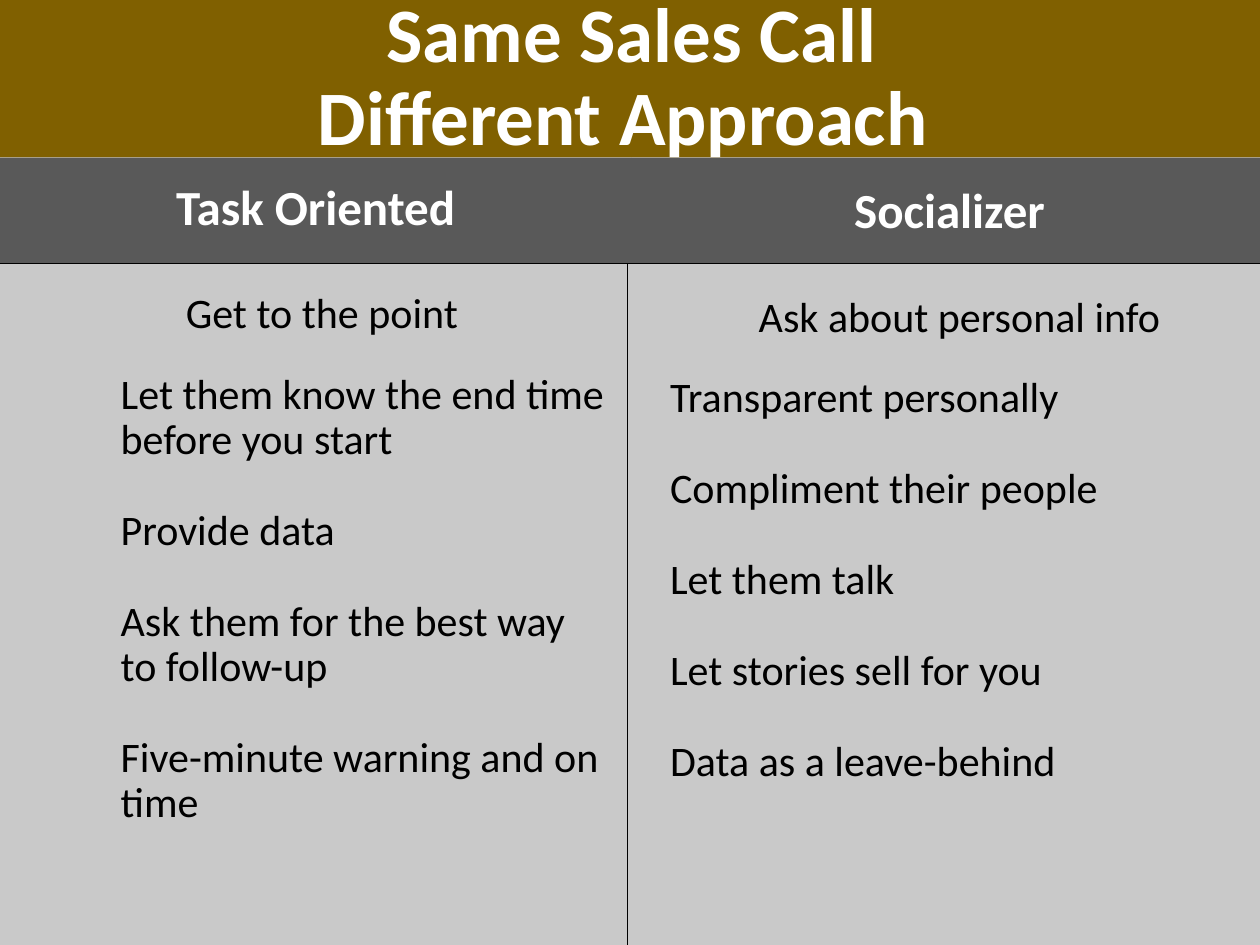
from pptx import Presentation
from pptx.dml.color import RGBColor
from pptx.enum.shapes import MSO_SHAPE
from pptx.enum.text import MSO_ANCHOR, PP_ALIGN
from pptx.util import Inches, Pt

COLORS = {
    "gold": "806000",
    "header": "595959",
    "panel": "C9C9C9",
    "white": "FFFFFF",
    "black": "000000",
}

PANELS = [
    ((0, 0, 10, 1.25), "gold", None),
    ((0, 1.25, 5.01, 1.25), "header", None),
    ((5.01, 1.25, 4.99, 0.99), "header", None),
    ((-0.05, 2.09, 5.08, 5.43), "panel", "black"),
    ((4.98, 2.09, 5.05, 5.43), "panel", "black"),
]

HEADINGS = [
    ((0, 0, 10.03, 1.25), ["Same Sales Call", "Different Approach "], 44, "white"),
    ((0, 1.25, 5.01, 0.82), ["Task Oriented"], 28, "white"),
    ((5.04, 1.35, 4.99, 0.67), ["Socializer"], 28, "white"),
    ((0.05, 2.09, 5.01, 0.82), ["Get to the point"], 24, "black"),
    ((5.12, 2.12, 4.99, 0.82), ["Ask about personal info"], 24, "black"),
]

TIPS = [
    ((0.86, 2.91, 4.07, 3.75), [
        "Let them know the end time before you start",
        "Provide data",
        "Ask them for the best way to follow-up",
        "Five-minute warning and on time",
    ]),
    ((5.22, 2.94, 4.64, 3.92), [
        "Transparent personally",
        "Compliment their people",
        "Let them talk",
        "Let stories sell for you",
        "Data as a leave-behind",
    ]),
]


class SlideBuilder:
    """Draws panels, headings and tip lists on one slide in a shared style."""

    font_name = "Calibri"
    line_spacing = 0.9
    tip_size = 24
    tip_gap = 26

    def __init__(self, page):
        self.page = page

    def color(self, name):
        return RGBColor.from_string(COLORS[name])

    def apply(self, target, values):
        for name, value in values.items():
            setattr(target, name, value)

    def panel(self, place, fill, line):
        shape = self.page.shapes.add_shape(MSO_SHAPE.RECTANGLE, *map(Inches, place))
        shape.shadow.inherit = False
        shape.fill.solid()
        shape.fill.fore_color.rgb = self.color(fill)
        if line:
            shape.line.color.rgb = self.color(line)
            shape.line.width = Pt(0.5)
        else:
            shape.line.fill.background()

    def text(self, place, lines, size, color, anchor, layout):
        box = self.page.shapes.add_textbox(*map(Inches, place))
        frame = box.text_frame
        self.apply(frame, {"word_wrap": True, "vertical_anchor": anchor})
        for index, line in enumerate(lines):
            para = frame.add_paragraph() if index else frame.paragraphs[0]
            self.apply(para, {"line_spacing": self.line_spacing, **layout})
            span = para.add_run()
            span.text = line
            self.apply(span.font, {
                "name": self.font_name,
                "size": Pt(size),
                "bold": color == "white",
            })
            span.font.color.rgb = self.color(color)

    def heading(self, place, lines, size, color):
        layout = {"alignment": PP_ALIGN.CENTER}
        self.text(place, lines, size, color, MSO_ANCHOR.MIDDLE, layout)

    def tips(self, place, lines):
        layout = {"alignment": PP_ALIGN.LEFT, "space_after": Pt(self.tip_gap)}
        self.text(place, lines, self.tip_size, "black", MSO_ANCHOR.TOP, layout)


def main():
    deck = Presentation()
    deck.slide_width, deck.slide_height = Inches(10), Inches(7.5)
    builder = SlideBuilder(deck.slides.add_slide(deck.slide_layouts[6]))
    for panel in PANELS:
        builder.panel(*panel)
    for heading in HEADINGS:
        builder.heading(*heading)
    for tips in TIPS:
        builder.tips(*tips)
    deck.save("out.pptx")


if __name__ == "__main__":
    main()
